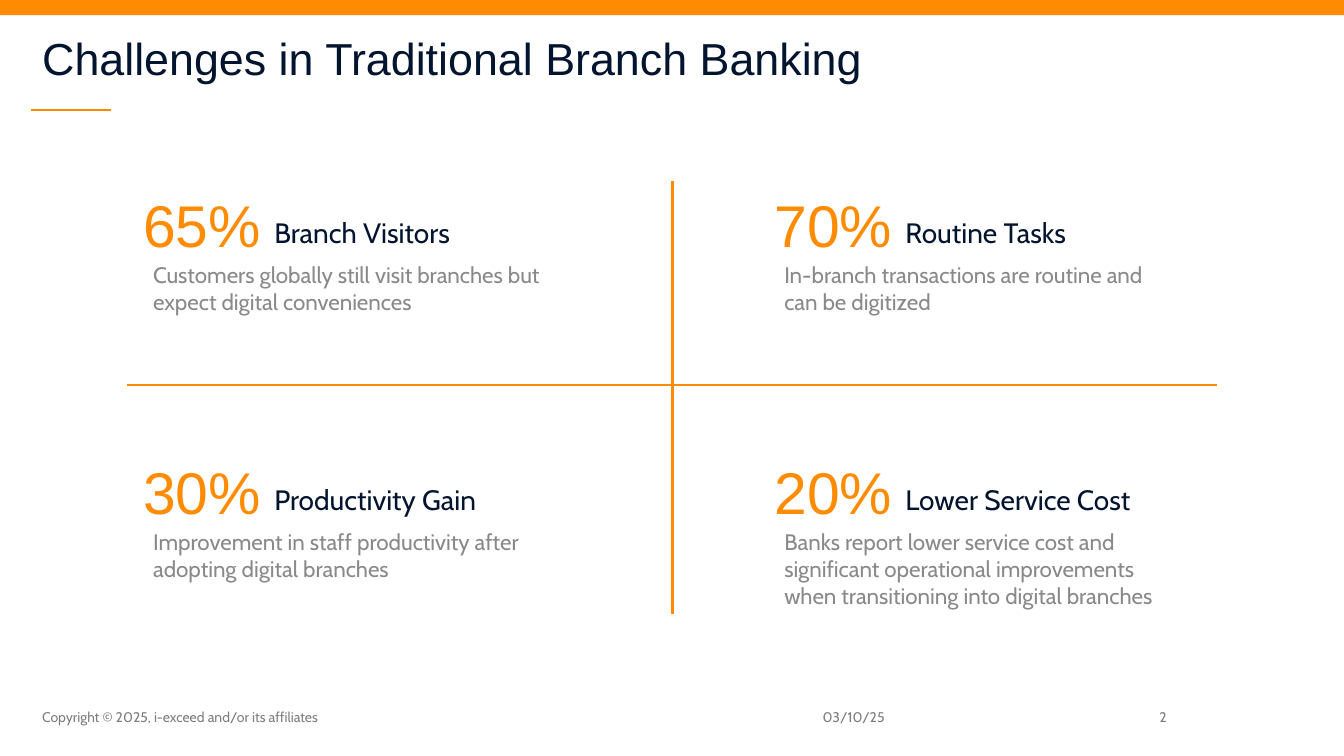
from lxml import etree
from pptx import Presentation, util as u
from pptx.dml.color import RGBColor
from pptx.enum import shapes, text
from pptx.oxml.ns import qn

PX = 9144  # 100 px to the inch
ORANGE, NAVY, GREY, FOOTER_GREY = "FF8C00", "03142E", "898989", "7E7E7E"
HEADING, BODY = "Arial", "Cabin"
TOP, BOTTOM = text.MSO_ANCHOR.TOP, text.MSO_ANCHOR.BOTTOM


def px(length):
    return u.Emu(length * PX)


def rgb(colour):
    return RGBColor.from_string(colour)


class SlideBuilder:
    def __init__(self, slide):
        self.slide = slide
        self.target = slide.shapes

    def group(self):
        """Send the elements that follow into a new group."""
        self.target = self.slide.shapes.add_group_shape().shapes

    def bar(self, left, top, width, height):
        bar = self.target.add_shape(shapes.MSO_SHAPE.RECTANGLE,
                                    px(left), px(top), px(width), px(height))
        bar.shadow.inherit = False
        bar.fill.solid()
        bar.fill.fore_color.rgb = rgb(ORANGE)
        bar.line.fill.background()

    def rule(self, x1, y1, x2, y2):
        rule = self.target.add_connector(shapes.MSO_CONNECTOR.STRAIGHT,
                                         px(x1), px(y1), px(x2), px(y2))
        rule.line.color.rgb = rgb(ORANGE)
        rule.line.width = u.Pt(1.5)
        etree.SubElement(rule._element.spPr, qn("a:effectLst"))

    def label(self, box, words, size, colour, font=BODY, anchor=BOTTOM,
              wrap=True, inset=10, align=text.PP_ALIGN.LEFT, after=0, spacing=1.0):
        frame = self.target.add_textbox(*map(px, box)).text_frame
        frame.word_wrap = wrap
        frame.vertical_anchor = anchor
        frame.margin_left = frame.margin_right = px(inset)
        frame.margin_top = frame.margin_bottom = px(5)
        frame.text = words
        line = frame.paragraphs[0]
        line.alignment = align
        line.space_after = u.Pt(after)
        line.line_spacing = spacing
        style = line.runs[0].font
        style.size = u.Pt(size)
        style.name = font
        style.color.rgb = rgb(colour)

    def challenge(self, left, top, figure, topic, detail, detail_height):
        self.group()
        self.label((left + 130, top + 16, 282, 43), topic, 20, NAVY,
                   anchor=TOP, wrap=False, inset=0, after=12)
        self.label((left, top + 61, 412, detail_height), detail, 16, GREY, anchor=TOP)
        self.label((left, top, 167, 69), figure, 42, ORANGE, font=HEADING,
                   wrap=False, inset=0, after=12)


def main():
    deck = Presentation()
    deck.slide_width, deck.slide_height = px(1333), px(750)
    page = SlideBuilder(deck.slides.add_slide(deck.slide_layouts[6]))

    # Header
    page.bar(0, 0, 1333, 15)
    page.rule(31, 109, 110, 109)
    page.label((32, 15, 1270, 74), "Challenges in Traditional Branch Banking",
               32, NAVY, font=HEADING, spacing=0.9)

    # Footer
    page.label((806, 685, 168, 40), "03/10/25", 10, FOOTER_GREY)
    page.label((32, 685, 684, 40), "Copyright © 2025, i-exceed and/or its affiliates",
               10, FOOTER_GREY)
    page.label((1065, 685, 102, 40), "2", 10, FOOTER_GREY, align=text.PP_ALIGN.RIGHT)

    # Cross dividing the quadrants
    page.rule(126, 382, 1207, 382)
    page.rule(667, 180, 667, 609)

    # Quadrants, row by row
    challenges = [
        ("65%", "Branch Visitors",
         "Customers globally still visit branches but expect digital conveniences", 64),
        ("70%", "Routine Tasks",
         "In-branch transactions are routine and can be digitized", 64),
        ("30%", "Productivity Gain",
         "Improvement in staff productivity after adopting digital branches", 64),
        ("20%", "Lower Service Cost",
         "Banks report lower service cost and significant operational improvements "
         "when transitioning into digital branches", 91),
    ]
    for index, challenge in enumerate(challenges):
        row, column = divmod(index, 2)
        page.challenge(142 + 626 * column, 193 + 265 * row, *challenge)

    deck.save("out.pptx")


if __name__ == "__main__":
    main()
